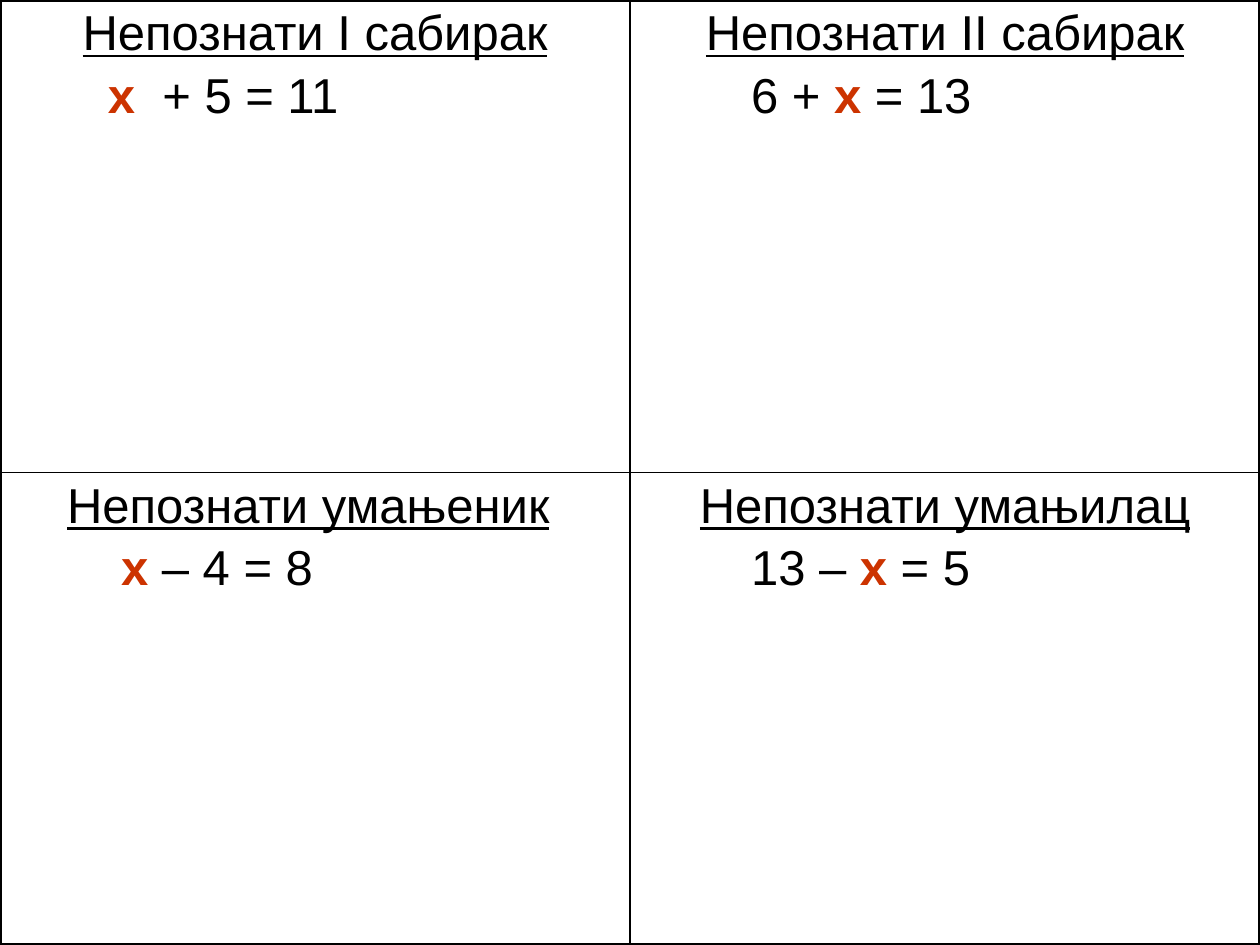
from dataclasses import dataclass

import lxml.etree
import pptx
import pptx.dml.color
import pptx.enum.text
import pptx.oxml.ns
import pptx.util

Pt = pptx.util.Pt
WIDTH, HEIGHT = 720, 540


@dataclass(frozen=True)
class Theme:
    font: str = "Arial"
    text_size: float = 28
    text: str = "000000"
    unknown: str = "CC3300"
    background: str = "FFFFFF"
    outer_border: float = 2.25
    inner_border: float = 1
    paragraph_gap: float = 4.7


@dataclass(frozen=True)
class Exercise:
    """An equation with unknown x; indents are in points."""
    title: str
    before: str
    after: str
    indent: float = 62
    right_margin: float = 7.2


EXERCISES = [
    [Exercise("Непознати I сабирак", "", "  + 5 = 11", indent=54.5),
     Exercise("Непознати II сабирак", "6 + ", " = 13")],
    [Exercise("Непознати умањеник", "", " – 4 = 8", right_margin=15),
     Exercise("Непознати умањилац", "13 – ", " = 5")],
]


class SlideBuilder:
    def __init__(self, slide, theme):
        self.slide = slide
        self.theme = theme

    def add_run(self, paragraph, text, color, bold=False, underline=False):
        run = paragraph.add_run()
        run.text = text
        font = run.font
        font.name = self.theme.font
        font.size = Pt(self.theme.text_size)
        font.bold = bold
        font.underline = underline
        font.color.rgb = pptx.dml.color.RGBColor.from_string(color)

    def set_borders(self, cell, widths):
        """Draw the left, right, top and bottom borders, in that order."""
        qualified = pptx.oxml.ns.qn
        properties = cell._tc.get_or_add_tcPr()
        for index, (side, width) in enumerate(zip("LRTB", widths)):
            line = lxml.etree.Element(qualified(f"a:ln{side}"), w=str(Pt(width)))
            fill = lxml.etree.SubElement(line, qualified("a:solidFill"))
            lxml.etree.SubElement(fill, qualified("a:srgbClr"), val=self.theme.text)
            properties.insert(index, line)

    def fill_cell(self, cell, exercise):
        theme = self.theme
        cell.fill.solid()
        cell.fill.fore_color.rgb = pptx.dml.color.RGBColor.from_string(theme.background)
        cell.margin_right = Pt(exercise.right_margin)

        title = cell.text_frame.paragraphs[0]
        title.alignment = pptx.enum.text.PP_ALIGN.CENTER
        self.add_run(title, exercise.title, theme.text, underline=True)

        equation = cell.text_frame.add_paragraph()
        equation.space_before = Pt(theme.paragraph_gap)
        equation._p.get_or_add_pPr().set("marL", str(Pt(exercise.indent)))
        if exercise.before:
            self.add_run(equation, exercise.before, theme.text)
        self.add_run(equation, "x", theme.unknown, bold=True)
        self.add_run(equation, exercise.after, theme.text)

    def add_exercise_table(self, exercises):
        row_count, column_count = len(exercises), len(exercises[0])
        table = self.slide.shapes.add_table(
            row_count, column_count, 0, 0, Pt(WIDTH), Pt(HEIGHT)).table
        table.first_row = False
        table.horz_banding = False
        outer, inner = self.theme.outer_border, self.theme.inner_border
        for row, row_exercises in enumerate(exercises):
            for column, exercise in enumerate(row_exercises):
                cell = table.cell(row, column)
                self.fill_cell(cell, exercise)
                on_edge = (column == 0, column == column_count - 1,
                           row == 0, row == row_count - 1)
                self.set_borders(cell, [outer if edge else inner for edge in on_edge])


def main():
    presentation = pptx.Presentation()
    presentation.slide_width = Pt(WIDTH)
    presentation.slide_height = Pt(HEIGHT)
    slide = presentation.slides.add_slide(presentation.slide_layouts[6])
    SlideBuilder(slide, Theme()).add_exercise_table(EXERCISES)
    presentation.save("out.pptx")


if __name__ == "__main__":
    main()
